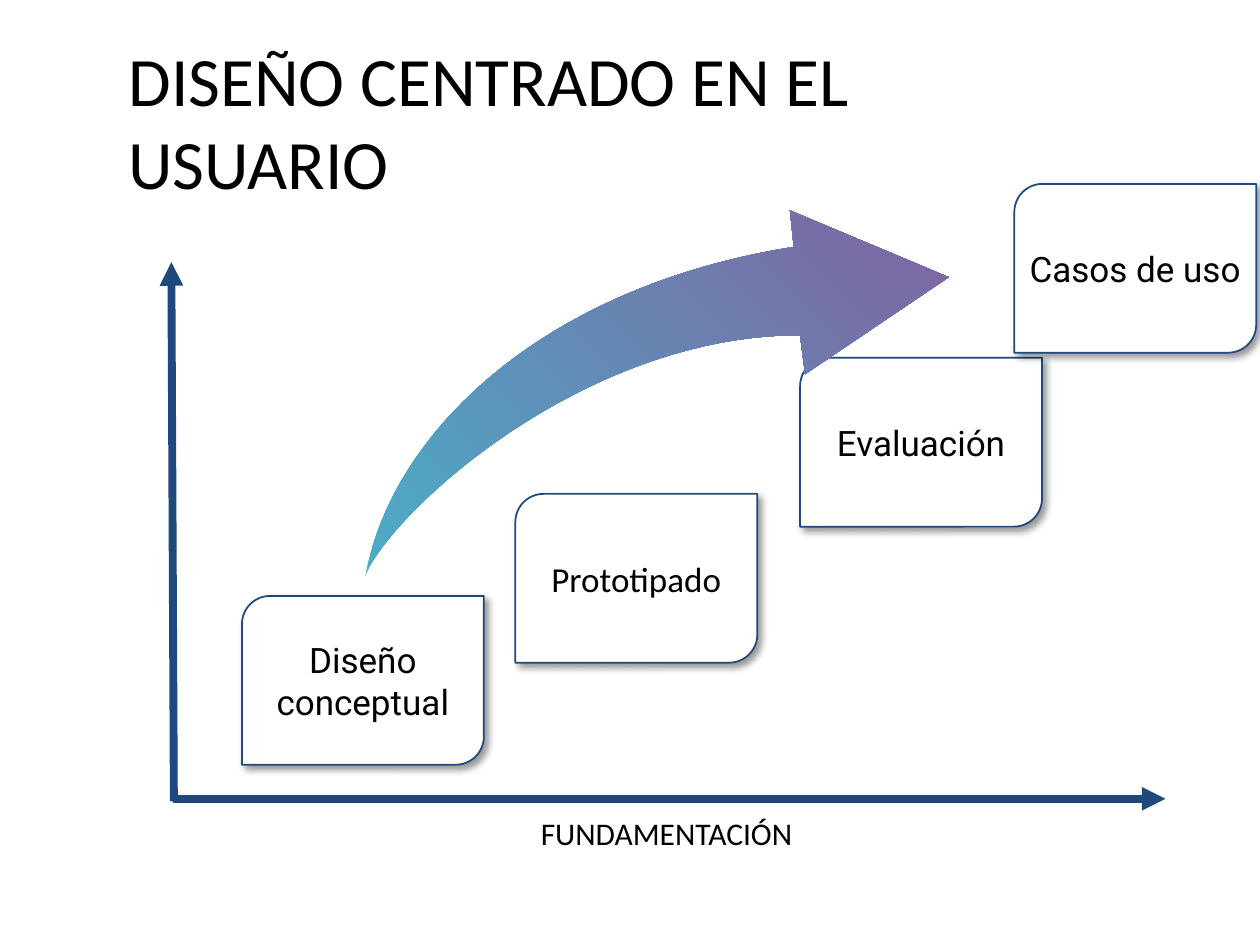
"""Build the user-centred design slide with its rising stages and axes."""
import pptx
import pptx.dml.color
import pptx.enum.dml
import pptx.enum.shapes
import pptx.enum.text
import pptx.oxml
import pptx.oxml.ns
import pptx.util

Inches = pptx.util.Inches
ALIGN = pptx.enum.text.PP_ALIGN
ANCHOR = pptx.enum.text.MSO_ANCHOR

TITLE = ("DISEÑO CENTRADO EN EL USUARIO", (0.92, 0.33, 7.13, 1.25))
AXIS_LABEL = ("FUNDAMENTACIÓN", (1.58, 6.41, 7.42, 0.4))
AXES = [((1.37, 6.34), (9.25, 6.34)), ((1.38, 6.36), (1.36, 2.08))]
STAGE_SIZE = (1.92, 1.34)
STAGES_BEHIND = [
    ("Diseño conceptual", (1.92, 4.73), "Roboto"),
    ("Evaluación", (6.35, 2.84), "Roboto"),
    ("Prototipado", (4.09, 3.92), "Calibri"),
]
STAGES_FRONT = [("Casos de uso", (8.05, 1.46), "Roboto")]
ARROW_TOP = [(2.9, 4.57), (3.1, 3.46), (4.28, 2.28), (6.3, 1.96)]
ARROW_HEAD = [(6.27, 1.67), (7.53, 2.2), (6.39, 2.97)]
ARROW_BOTTOM = [(6.35, 2.66), (4.63, 2.66), (3.11, 4.06), (2.9, 4.57)]
CURVE_STEPS = 40

THEME = {
    "text": "000000", "navy": "1F497D", "white": "FFFFFF",
    "gradient": ("4BACC6", "8064A2"), "gradient_angle": 45,
    "font": "Calibri", "title": 39.6, "label": 18, "stage": 20,
    "axis_width": 4.5, "stage_width": 1,
}
STAGE_FRAME = {
    "word_wrap": True, "vertical_anchor": ANCHOR.MIDDLE,
    "margin_left": Inches(0.05), "margin_right": Inches(0.05),
    "margin_top": Inches(0.05), "margin_bottom": Inches(0.05),
}
TITLE_FRAME = {
    "word_wrap": True, "vertical_anchor": ANCHOR.MIDDLE,
    "auto_size": pptx.enum.text.MSO_AUTO_SIZE.NONE,
}
LABEL_FRAME = {"word_wrap": True}
NAMESPACE = pptx.oxml.ns.nsdecls("a")
SHADOW = (
    f'<a:outerShdw {NAMESPACE} blurRad="{pptx.util.Pt(4)}" dist="{pptx.util.Pt(3)}" '
    'dir="2700000" algn="tl" rotWithShape="0"><a:srgbClr val="000000">'
    '<a:alpha val="40000"/></a:srgbClr></a:outerShdw>'
)


def color(name):
    return pptx.dml.color.RGBColor.from_string(THEME[name])


def set_attributes(target, values):
    for name, value in values.items():
        setattr(target, name, value)


def write_text(shape, text, frame_format, size, alignment, font=THEME["font"]):
    set_attributes(shape.text_frame, frame_format)
    shape.text_frame.text = text
    paragraph = shape.text_frame.paragraphs[0]
    paragraph.alignment = alignment
    set_attributes(paragraph.font, {"name": font, "size": pptx.util.Pt(THEME[size])})
    paragraph.font.color.rgb = color("text")


def set_line(shape, width):
    shape.line.color.rgb = color("navy")
    shape.line.width = pptx.util.Pt(THEME[width])


def add_axis(slide, start, end):
    axis = slide.shapes.add_connector(
        pptx.enum.shapes.MSO_CONNECTOR.STRAIGHT, *map(Inches, start + end))
    set_line(axis, "axis_width")
    properties = axis.element.spPr
    line = properties.find(pptx.oxml.ns.qn("a:ln"))
    line.append(pptx.oxml.parse_xml(f'<a:tailEnd {NAMESPACE} type="triangle"/>'))
    properties.append(pptx.oxml.parse_xml(f"<a:effectLst {NAMESPACE}/>"))


def add_stage(slide, text, position, font):
    stage = slide.shapes.add_shape(
        pptx.enum.shapes.MSO_SHAPE.ROUND_2_DIAG_RECTANGLE,
        *map(Inches, position + STAGE_SIZE))
    stage.fill.solid()
    stage.fill.fore_color.rgb = color("white")
    set_line(stage, "stage_width")
    stage.shadow.inherit = False
    effects = stage.element.spPr.find(pptx.oxml.ns.qn("a:effectLst"))
    effects.append(pptx.oxml.parse_xml(SHADOW))
    write_text(stage, text, STAGE_FRAME, "stage", ALIGN.CENTER, font)


def curve_points(controls):
    points = []
    for step in range(CURVE_STEPS + 1):
        t = step / CURVE_STEPS
        weights = ((1 - t) ** 3, 3 * t * (1 - t) ** 2, 3 * t * t * (1 - t), t ** 3)
        points.append(tuple(
            sum(weight * value for weight, value in zip(weights, values))
            for values in zip(*controls)))
    return points


def add_arrow(slide):
    outline = curve_points(ARROW_TOP) + ARROW_HEAD + curve_points(ARROW_BOTTOM)
    points = [tuple(map(Inches, point)) for point in outline]
    builder = slide.shapes.build_freeform(*points[0])
    builder.add_line_segments(points[1:], close=True)
    arrow = builder.convert_to_shape()
    arrow.shadow.inherit = False
    arrow.line.fill.background()
    arrow.fill.gradient()
    arrow.fill.gradient_angle = THEME["gradient_angle"]
    for position, (stop, value) in enumerate(zip(arrow.fill.gradient_stops, THEME["gradient"])):
        stop.position = position
        stop.color.rgb = pptx.dml.color.RGBColor.from_string(value)


def main():
    presentation = pptx.Presentation()
    set_attributes(presentation, {"slide_width": Inches(10), "slide_height": Inches(7.5)})
    slide = presentation.slides.add_slide(presentation.slide_layouts[5])

    text, box = TITLE
    title = slide.shapes.title
    set_attributes(title, dict(zip(("left", "top", "width", "height"), map(Inches, box))))
    write_text(title, text, TITLE_FRAME, "title", ALIGN.LEFT)

    for start, end in AXES:
        add_axis(slide, start, end)
    text, box = AXIS_LABEL
    label = slide.shapes.add_textbox(*map(Inches, box))
    write_text(label, text, LABEL_FRAME, "label", ALIGN.CENTER)

    for stage in STAGES_BEHIND:
        add_stage(slide, *stage)
    add_arrow(slide)
    for stage in STAGES_FRONT:
        add_stage(slide, *stage)
    presentation.save("out.pptx")


if __name__ == "__main__":
    main()
